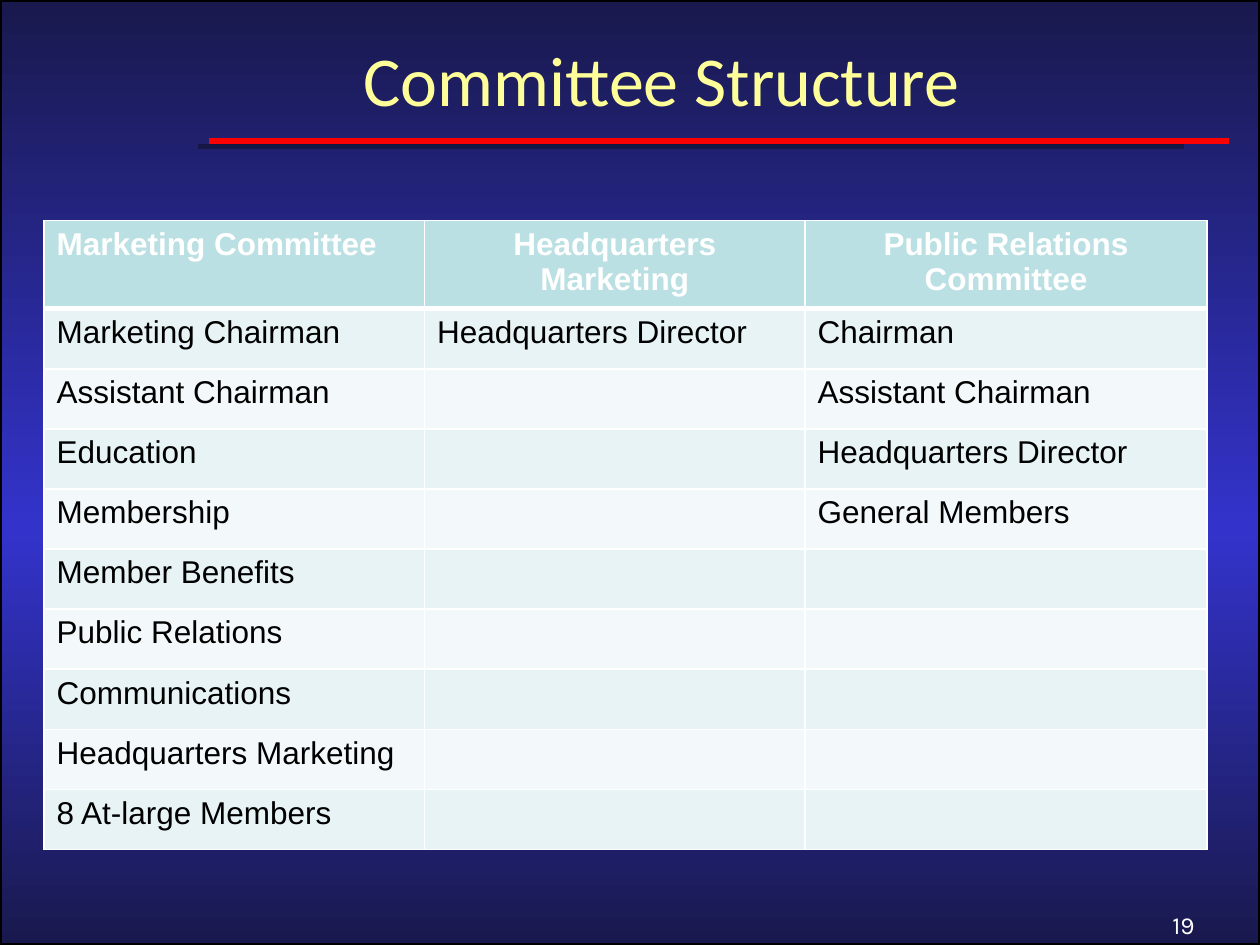
from copy import deepcopy
from itertools import zip_longest

from lxml.etree import SubElement
from pptx import Presentation
from pptx.dml.color import RGBColor
from pptx.enum.shapes import MSO_CONNECTOR, MSO_SHAPE
from pptx.enum.text import MSO_ANCHOR, PP_ALIGN
from pptx.oxml import parse_xml
from pptx.oxml.ns import nsdecls, qn
from pptx.util import Inches, Pt

# Content
TITLE = "Committee Structure"
PAGE = "19"
COMMITTEES = {
    "Marketing Committee": [
        "Marketing Chairman", "Assistant Chairman", "Education", "Membership",
        "Member Benefits", "Public Relations", "Communications",
        "Headquarters Marketing", "8 At-large Members"],
    "Headquarters Marketing": ["Headquarters Director"],
    "Public Relations Committee": [
        "Chairman", "Assistant Chairman", "Headquarters Director", "General Members"],
}
COL_WIDTHS = [3.02, 3.02, 3.19]
ROW_HEIGHT = 0.477
RULES = [(1.57, 9.4, 1.16, "171745"), (1.66, 9.75, 1.12, "FF0000")]  # x1, x2, y, colour

THEME = {
    "background": [(0, "19194D"), (0.56, "3333CC"), (1, "19194D")],
    "frame": "000000",
    "border": "FFFFFF",
    "head_fill": "BBE0E3",
    "bands": ["E7F3F4", "F3F9FA"],
    "title": {"name": "Calibri", "size": Pt(40), "color": "FFFF99", "bold": False},
    "page": {"name": "Karla", "size": Pt(14), "color": "FFFFFF"},
    "head": {"name": "Arial", "size": Pt(18), "color": "FFFFFF", "bold": True},
    "body": {"name": "Arial", "size": Pt(18), "color": "000000", "bold": False},
}


def rgb(value):
    return RGBColor.from_string(value)


def write(tf, text, style, align):
    p = tf.paragraphs[0]
    p.alignment = align
    r = p.add_run()
    r.text = text
    for key, value in style.items():
        if key == "color":
            r.font.color.rgb = rgb(value)
        else:
            setattr(r.font, key, value)
    return p, r


def set_borders(cell, widths):
    tcPr = cell._tc.get_or_add_tcPr()
    for i, (side, width) in enumerate(widths.items()):
        tcPr.insert(i, parse_xml(
            f'<a:ln{side} {nsdecls("a")} w="{Pt(width)}"><a:solidFill>'
            f'<a:srgbClr val="{THEME["border"]}"/></a:solidFill></a:ln{side}>'))


def paint_background(s):
    fill = s.background.fill
    fill.gradient()
    fill.gradient_angle = 270
    first = fill.gradient_stops[0]._gs
    first.addnext(deepcopy(first))
    for stop, (position, color) in zip(fill.gradient_stops, THEME["background"]):
        stop.position = position
        stop.color.rgb = rgb(color)


def add_rules_and_frame(s, prs):
    for x1, x2, y, color in RULES:
        rule = s.shapes.add_connector(
            MSO_CONNECTOR.STRAIGHT, Inches(x1), Inches(y), Inches(x2), Inches(y))
        rule.line.color.rgb = rgb(color)
        rule.line.width = Pt(3)
        SubElement(rule._element.spPr, qn("a:effectLst"))
    frame = s.shapes.add_shape(MSO_SHAPE.RECTANGLE, 0, 0, prs.slide_width, prs.slide_height)
    frame.shadow.inherit = False
    frame.fill.background()
    frame.line.color.rgb = rgb(THEME["frame"])
    frame.line.width = Pt(2)


def add_title(s):
    title = s.shapes.title
    title.left, title.top, title.width, title.height = map(Inches, (0.75, 0.08, 9, 1.25))
    title.text_frame.vertical_anchor = MSO_ANCHOR.MIDDLE
    p, r = write(title.text_frame, TITLE, THEME["title"], PP_ALIGN.CENTER)
    p.line_spacing = Pt(36)
    # Drop shadow behind the letters
    r.font._element.find(qn("a:solidFill")).addnext(parse_xml(
        f'<a:effectLst {nsdecls("a")}><a:outerShdw dist="35921" dir="2700000">'
        '<a:srgbClr val="000000"/></a:outerShdw></a:effectLst>'))


def add_page_number(s):
    tf = s.shapes.add_textbox(Inches(7.25), Inches(7.17), Inches(2.33), Inches(0.27)).text_frame
    tf.word_wrap = True
    write(tf, PAGE, THEME["page"], PP_ALIGN.RIGHT)


def add_committee_table(s):
    rows = [list(COMMITTEES), *zip_longest(*COMMITTEES.values(), fillvalue="")]
    table = s.shapes.add_table(
        len(rows), len(COL_WIDTHS), Inches(0.35), Inches(1.75),
        Inches(sum(COL_WIDTHS)), Inches(ROW_HEIGHT * len(rows))).table
    for column, width in zip(table.columns, COL_WIDTHS):
        column.width = Inches(width)
    for i, row in enumerate(rows):
        table.rows[i].height = Inches(ROW_HEIGHT)
        for j, text in enumerate(row):
            cell = table.cell(i, j)
            cell.fill.solid()
            cell.fill.fore_color.rgb = rgb(
                THEME["bands"][(i - 1) % 2] if i else THEME["head_fill"])
            # A thick line parts the header from the body
            set_borders(cell, {"L": 1, "R": 1, "T": 3 if i == 1 else 1, "B": 1 if i else 3})
            if text:
                align = PP_ALIGN.CENTER if i == 0 and j else PP_ALIGN.LEFT
                write(cell.text_frame, text, THEME["body" if i else "head"], align)


def main():
    prs = Presentation()
    prs.slide_width, prs.slide_height = Inches(10), Inches(7.5)
    s = prs.slides.add_slide(prs.slide_layouts[5])
    paint_background(s)
    add_rules_and_frame(s, prs)
    add_title(s)
    add_page_number(s)
    add_committee_table(s)
    prs.save("out.pptx")


if __name__ == "__main__":
    main()
